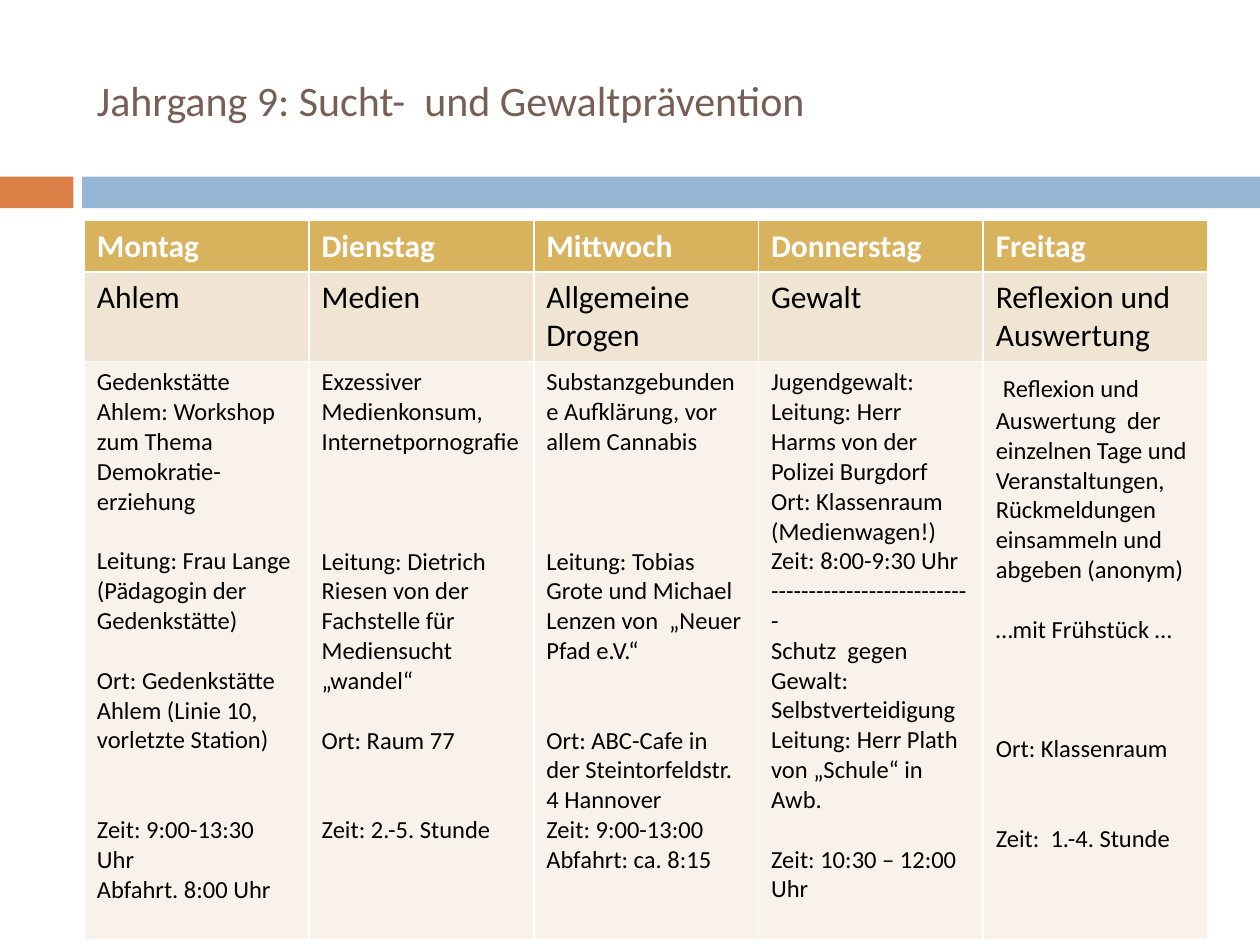
"""Build the timetable slide for the year 9 prevention week."""
from pptx import Presentation
from pptx.dml.color import RGBColor as RGB
from pptx.enum.shapes import MSO_SHAPE as SHAPE
from pptx.enum.text import MSO_ANCHOR as ANCHOR, PP_ALIGN as ALIGN
from pptx.util import Cm, Pt

LINE = 17.08


def paint(fill, color):
    fill.solid()
    fill.fore_color.rgb = RGB.from_string(color)


def write(p, text, size=14, color="000000", bold=False, gap=0):
    p.alignment = ALIGN.LEFT
    if gap:
        p.space_before = Pt(round(gap * LINE, 1))
    r = p.add_run()
    r.text = text
    r.font.name = "Calibri"
    r.font.size = Pt(size)
    r.font.bold = bold
    paint(r.font.fill, color)


days = ["Montag", "Dienstag", "Mittwoch", "Donnerstag", "Freitag"]
topics = ["Ahlem", "Medien", "Allgemeine Drogen", "Gewalt", "Reflexion und Auswertung"]
details = [
    [
        (0, "Gedenkstätte Ahlem: Workshop zum Thema Demokratie-erziehung"),
        (1, "Leitung: Frau Lange (Pädagogin der Gedenkstätte)"),
        (1, "Ort: Gedenkstätte Ahlem (Linie 10, vorletzte Station)"),
        (2, "Zeit: 9:00-13:30 Uhr"),
        (0, "Abfahrt. 8:00 Uhr"),
    ],
    [
        (0, "Exzessiver Medienkonsum, Internetpornografie"),
        (3, "Leitung: Dietrich Riesen von der Fachstelle für Mediensucht „wandel“"),
        (1, "Ort: Raum 77"),
        (2, "Zeit: 2.-5. Stunde"),
    ],
    [
        (0, "Substanzgebundene Aufklärung, vor allem Cannabis"),
        (3, "Leitung: Tobias Grote und Michael Lenzen von  „Neuer Pfad e.V.“"),
        (2, "Ort: ABC-Cafe in der Steintorfeldstr. 4 Hannover"),
        (0, "Zeit: 9:00-13:00"),
        (0, "Abfahrt: ca. 8:15"),
    ],
    [
        (0, "Jugendgewalt:"),
        (0, "Leitung: Herr Harms von der Polizei Burgdorf"),
        (0, "Ort: Klassenraum"),
        (0, "(Medienwagen!)"),
        (0, "Zeit: 8:00-9:30 Uhr"),
        (0, "-" * 27),
        (0, "Schutz  gegen Gewalt: Selbstverteidigung"),
        (0, "Leitung: Herr Plath von „Schule“ in Awb."),
        (1, "Zeit: 10:30 – 12:00 Uhr"),
    ],
    [
        (0, "Reflexion und Auswertung  der einzelnen Tage und Veranstaltungen, "
            "Rückmeldungen einsammeln und abgeben (anonym)"),
        (1, "…mit Frühstück …"),
        (3, "Ort: Klassenraum"),
        (2, "Zeit:  1.-4. Stunde"),
    ],
]

prs = Presentation()
prs.slide_width, prs.slide_height = Cm(25.4), Cm(19.05)
s = prs.slides.add_slide(prs.slide_layouts[5])

for left, width, color in [(0, 1.48, "DD8047"), (1.65, 23.75, "94B6D2")]:
    sp = s.shapes.add_shape(SHAPE.RECTANGLE, Cm(left), Cm(3.56), Cm(width), Cm(0.64))
    sp.shadow.inherit = False
    paint(sp.fill, color)
    sp.line.fill.background()

title = s.shapes.title
title.left, title.top, title.width, title.height = Cm(1.7), Cm(0.64), Cm(22.65), Cm(2.74)
tf = title.text_frame
tf.word_wrap = True
tf.vertical_anchor = ANCHOR.MIDDLE
write(tf.paragraphs[0], "Jahrgang 9: Sucht-  und Gewaltprävention", size=24, color="775F55")

heights = [1.03, 1.8, 11.65]
table = s.shapes.add_table(3, 5, Cm(1.7), Cm(4.45), Cm(22.65), Cm(sum(heights))).table
table.horz_banding = False
for row, height, color in zip(table.rows, heights, ["D8B25C", "F0E4D2", "F8F2EA"]):
    row.height = Cm(height)
    for cell in row.cells:
        paint(cell.fill, color)

for col, (day, topic, entries) in enumerate(zip(days, topics, details)):
    table.columns[col].width = Cm(4.53)
    write(table.cell(0, col).text_frame.paragraphs[0], day, size=18, color="FFFFFF", bold=True)
    write(table.cell(1, col).text_frame.paragraphs[0], topic, size=18)
    tf = table.cell(2, col).text_frame
    for i, (gap, text) in enumerate(entries):
        p = tf.add_paragraph() if i else tf.paragraphs[0]
        if day == "Freitag" and i == 0:
            write(p, " ", size=18)
        write(p, text, gap=gap)

prs.save("out.pptx")
